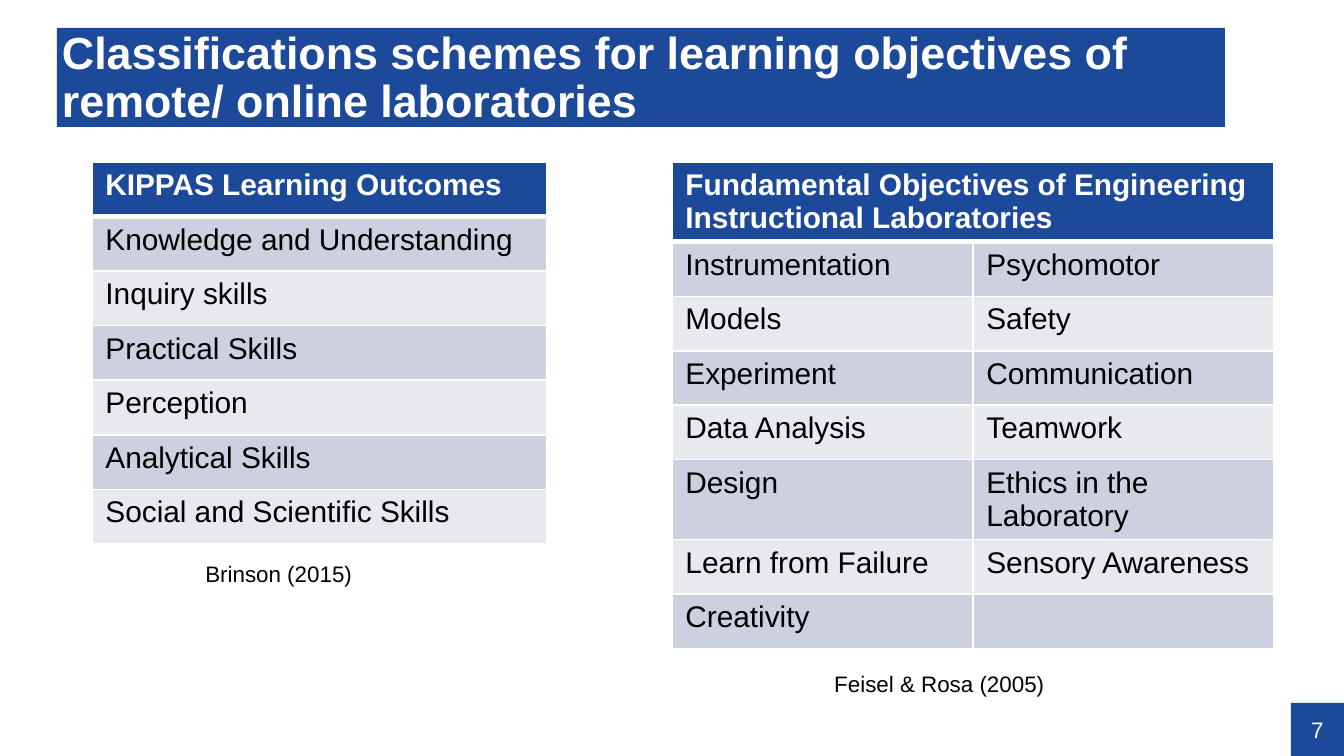
from dataclasses import dataclass

from pptx import Presentation
from pptx import util as u
from pptx.dml import color
from pptx.enum import shapes, text
from pptx.oxml import xmlchemy

PX = u.Inches(1) / 134.4


def px(*lengths):
    return [round(n * PX) for n in lengths]


@dataclass(frozen=True)
class Theme:
    font: str = "Arial"
    blue: str = "1D499B"
    white: str = "FFFFFF"
    black: str = "000000"
    bands: tuple = ("CDD0DE", "E8E9EF")
    title: int = 24
    table: int = 16
    small: int = 12
    rule: int = 1
    header_rule: int = 3


class SlideBuilder:
    def __init__(self, prs, theme):
        self.theme = theme
        self.s = prs.slides.add_slide(prs.slide_layouts[5])

    def fill(self, item, rgb):
        item.fill.solid()
        item.fill.fore_color.rgb = color.RGBColor.from_string(rgb)

    def set_text(self, tf, words, size, rgb, bold=False):
        tf.text = words
        p = tf.paragraphs[0]
        for r in p.runs:
            r.font.name = self.theme.font
            r.font.size = u.Pt(size)
            r.font.bold = bold
            r.font.color.rgb = color.RGBColor.from_string(rgb)
        return p

    def inset(self, tf, left=0, top=0):
        tf.margin_left, tf.margin_top = px(left, top)
        tf.margin_right = tf.margin_bottom = 0
        tf.vertical_anchor = text.MSO_ANCHOR.MIDDLE

    def title(self, words, x, y, w, h):
        sp = self.s.shapes.title
        sp.left, sp.top, sp.width, sp.height = px(x, y, w, h)
        self.fill(sp, self.theme.blue)
        tf = sp.text_frame
        tf.auto_size = text.MSO_AUTO_SIZE.NONE
        self.inset(tf, 5, 3)
        p = self.set_text(tf, words, self.theme.title, self.theme.white, True)
        p.alignment = text.PP_ALIGN.LEFT
        p.line_spacing = 0.9

    def page_number(self, words, x, y, w, h):
        sp = self.s.shapes.add_shape(shapes.MSO_SHAPE.RECTANGLE, *px(x, y, w, h))
        sp.shadow.inherit = False
        self.fill(sp, self.theme.blue)
        sp.line.fill.background()
        self.inset(sp.text_frame)
        p = self.set_text(sp.text_frame, words, self.theme.small, self.theme.white)
        p.alignment = text.PP_ALIGN.CENTER

    def caption(self, words, x, y, w, h):
        tf = self.s.shapes.add_textbox(*px(x, y, w, h)).text_frame
        tf.word_wrap = False
        tf.auto_size = text.MSO_AUTO_SIZE.SHAPE_TO_FIT_TEXT
        self.set_text(tf, words, self.theme.small, self.theme.black)

    def borders(self, cell, top, bottom):
        tc_pr = cell._tc.get_or_add_tcPr()
        rule = self.theme.rule
        for side, width in zip("LRTB", (rule, rule, top, bottom)):
            ln = xmlchemy.OxmlElement(f"a:ln{side}")
            ln.set("w", str(u.Pt(width)))
            solid = xmlchemy.OxmlElement("a:solidFill")
            rgb = xmlchemy.OxmlElement("a:srgbClr")
            rgb.set("val", self.theme.white)
            solid.append(rgb)
            ln.append(solid)
            tc_pr.append(ln)

    def table(self, header, rows, x, y, w, h):
        t = self.theme
        n_cols = len(rows[0])
        grid = [[header] + [""] * (n_cols - 1)] + rows
        table = self.s.shapes.add_table(len(grid), n_cols, *px(x, y, w, h)).table
        for i, row in enumerate(grid):
            for j, words in enumerate(row):
                cell = table.cell(i, j)
                is_header = i == 0
                self.borders(cell, t.header_rule if i == 1 else t.rule,
                             t.header_rule if is_header else t.rule)
                self.fill(cell, t.blue if is_header else t.bands[(i - 1) % 2])
                self.set_text(cell.text_frame, words, t.table,
                              t.white if is_header else t.black, is_header)
        if n_cols > 1:
            table.cell(0, 0).merge(table.cell(0, n_cols - 1))


def main():
    prs = Presentation()
    prs.slide_width, prs.slide_height = px(1344, 756)
    s = SlideBuilder(prs, Theme())
    s.page_number("7", 1291, 703, 53, 53)
    s.title("Classifications schemes for learning objectives of "
            "remote/ online laboratories", 57, 28, 1168, 99)

    outcomes = ["Knowledge and Understanding", "Inquiry skills", "Practical Skills",
                "Perception", "Analytical Skills", "Social and Scientific Skills"]
    s.table("KIPPAS Learning Outcomes", [[name] for name in outcomes],
            92, 162, 455, 382)

    objectives = [
        ["Instrumentation", "Psychomotor"],
        ["Models", "Safety"],
        ["Experiment", "Communication"],
        ["Data Analysis", "Teamwork"],
        ["Design", "Ethics in the Laboratory"],
        ["Learn from Failure", "Sensory Awareness"],
        ["Creativity", ""],
    ]
    s.table("Fundamental Objectives of Engineering Instructional Laboratories",
            objectives, 672, 162, 602, 436)

    s.caption("Brinson (2015)", 192, 554, 181, 40)
    s.caption("Feisel & Rosa (2005)", 821, 664, 253, 40)
    prs.save("out.pptx")


if __name__ == "__main__":
    main()
